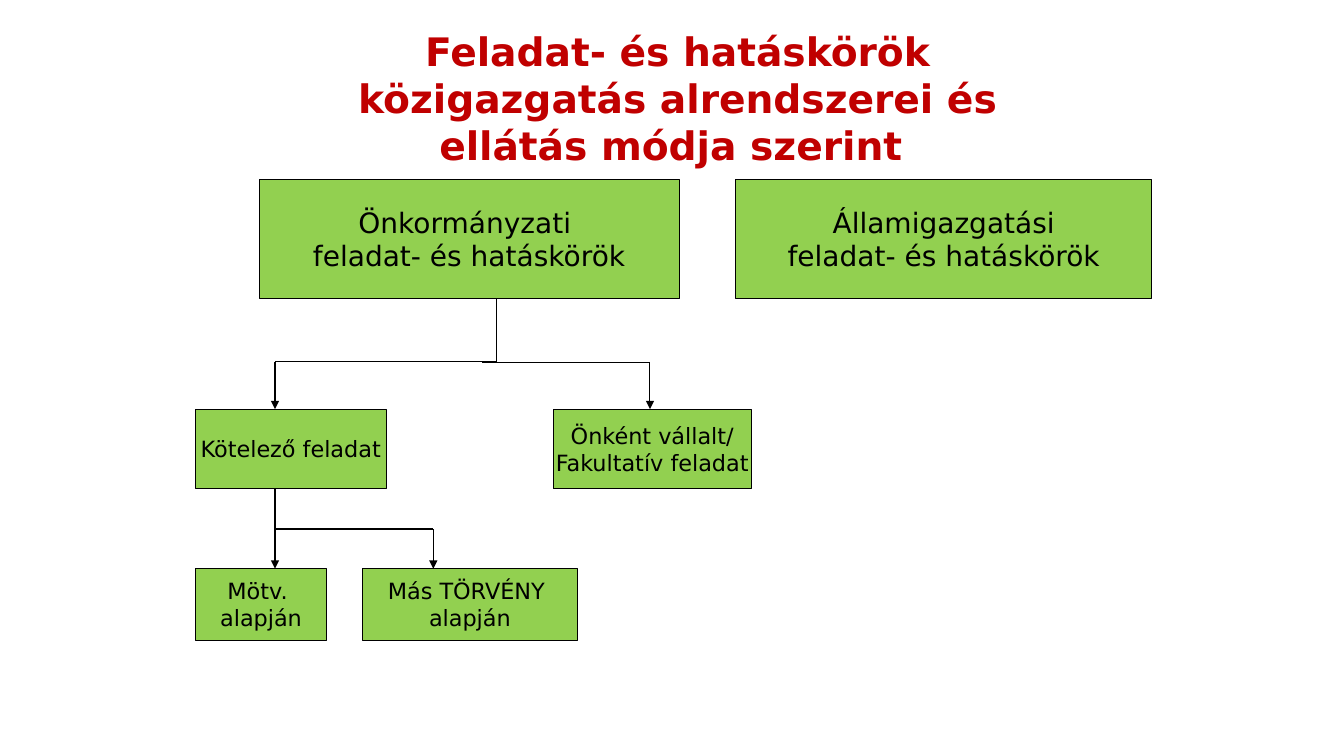
from dataclasses import dataclass

from lxml import etree
from pptx import Presentation
from pptx import util as u
from pptx.dml import color
from pptx.enum import shapes, text
from pptx.oxml import ns

COLORS = {"box": "92D050", "ink": "000000", "title": "C00000"}
FONT = "DejaVu Sans"
UPPER_TOP, UPPER_BOTTOM = 4.52, 7.52
MIDDLE_BUS, MIDDLE_TOP, MIDDLE_BOTTOM = 9.12, 10.31, 12.32
LOWER_BUS, LOWER_TOP, LOWER_BOTTOM = 13.33, 14.33, 16.13
MUNICIPAL_X, MANDATORY_X, VOLUNTARY_X, OTHER_LAW_X = 12.52, 6.93, 16.38, 10.92


@dataclass
class Box:
    lines: list[str]
    left: float
    top: float
    width: float
    bottom: float
    size: int = 16


@dataclass
class Line:
    x1: float
    y1: float
    x2: float
    y2: float
    arrow: bool = False
    weight: float = 0.75


BOXES = [
    Box(["Önkormányzati ", "feladat- és hatáskörök"], 6.53, UPPER_TOP, 10.59, UPPER_BOTTOM, 20),
    Box(["Államigazgatási", "feladat- és hatáskörök"], 18.54, UPPER_TOP, 10.49, UPPER_BOTTOM, 20),
    Box(["Kötelező feladat"], 4.93, MIDDLE_TOP, 4.8, MIDDLE_BOTTOM),
    Box(["Önként vállalt/", "Fakultatív feladat"], 13.94, MIDDLE_TOP, 5.0, MIDDLE_BOTTOM),
    Box(["Mötv. ", "alapján"], 4.93, LOWER_TOP, 3.3, LOWER_BOTTOM),
    Box(["Más TÖRVÉNY ", "alapján"], 9.14, LOWER_TOP, 5.41, LOWER_BOTTOM),
]

LINES = [
    Line(MANDATORY_X, MIDDLE_BUS, MANDATORY_X, MIDDLE_TOP, True),
    Line(VOLUNTARY_X, MIDDLE_BUS, VOLUNTARY_X, MIDDLE_TOP, True),
    Line(MANDATORY_X, MIDDLE_BUS, MUNICIPAL_X, MIDDLE_BUS),
    Line(MUNICIPAL_X, MIDDLE_BUS, MUNICIPAL_X, UPPER_BOTTOM),
    Line(MANDATORY_X, MIDDLE_BOTTOM, MANDATORY_X, LOWER_BUS),
    Line(MANDATORY_X, LOWER_BUS, OTHER_LAW_X, LOWER_BUS),
    Line(MANDATORY_X, LOWER_BUS, MANDATORY_X, LOWER_TOP, True),
    Line(OTHER_LAW_X, LOWER_BUS, OTHER_LAW_X, LOWER_TOP, True),
    Line(VOLUNTARY_X, MIDDLE_BUS, 12.14, MIDDLE_BUS, weight=0.5),
]


def rgb(name: str) -> color.RGBColor:
    return color.RGBColor.from_string(COLORS[name])


def style_paragraph(paragraph, size: int, ink: str, bold: bool = False) -> None:
    paragraph.alignment = text.PP_ALIGN.CENTER
    paragraph.font.name = FONT
    paragraph.font.size = u.Pt(size)
    paragraph.font.bold = bold
    paragraph.font.color.rgb = rgb(ink)


def draw_box(slide, box: Box) -> None:
    shape = slide.shapes.add_shape(
        shapes.MSO_SHAPE.RECTANGLE, u.Cm(box.left), u.Cm(box.top),
        u.Cm(box.width), u.Cm(box.bottom - box.top))
    shape.shadow.inherit = False
    shape.fill.solid()
    shape.fill.fore_color.rgb = rgb("box")
    shape.line.color.rgb = rgb("ink")
    shape.line.width = u.Pt(0.75)
    frame = shape.text_frame
    frame.word_wrap = False
    frame.vertical_anchor = text.MSO_ANCHOR.MIDDLE
    frame.text = "\n".join(box.lines)
    for paragraph in frame.paragraphs:
        style_paragraph(paragraph, box.size, "ink")


def draw_line(slide, line: Line) -> None:
    connector = slide.shapes.add_connector(
        shapes.MSO_CONNECTOR.STRAIGHT,
        u.Cm(line.x1), u.Cm(line.y1), u.Cm(line.x2), u.Cm(line.y2))
    connector.line.color.rgb = rgb("ink")
    connector.line.width = u.Pt(line.weight)
    properties = connector._element.spPr
    if line.arrow:
        outline = properties.find(ns.qn("a:ln"))
        etree.SubElement(outline, ns.qn("a:tailEnd"), type="triangle")
    etree.SubElement(properties, ns.qn("a:effectLst"))


def draw_title(slide) -> None:
    title = slide.shapes.add_textbox(u.Cm(6.93), u.Cm(0.36), u.Cm(20.29), u.Cm(4.01))
    frame = title.text_frame
    frame.word_wrap = True
    frame.margin_top = u.Cm(0.33)
    frame.text = "Feladat- és hatáskörök közigazgatás alrendszerei és ellátás módja szerint "
    style_paragraph(frame.paragraphs[0], 28, "title", True)


def main() -> None:
    presentation = Presentation()
    presentation.slide_width = u.Cm(33.87)
    presentation.slide_height = u.Cm(19.05)
    slide = presentation.slides.add_slide(presentation.slide_layouts[6])
    for box in BOXES:
        draw_box(slide, box)
    for line in LINES:
        draw_line(slide, line)
    draw_title(slide)
    presentation.save("out.pptx")


if __name__ == "__main__":
    main()
